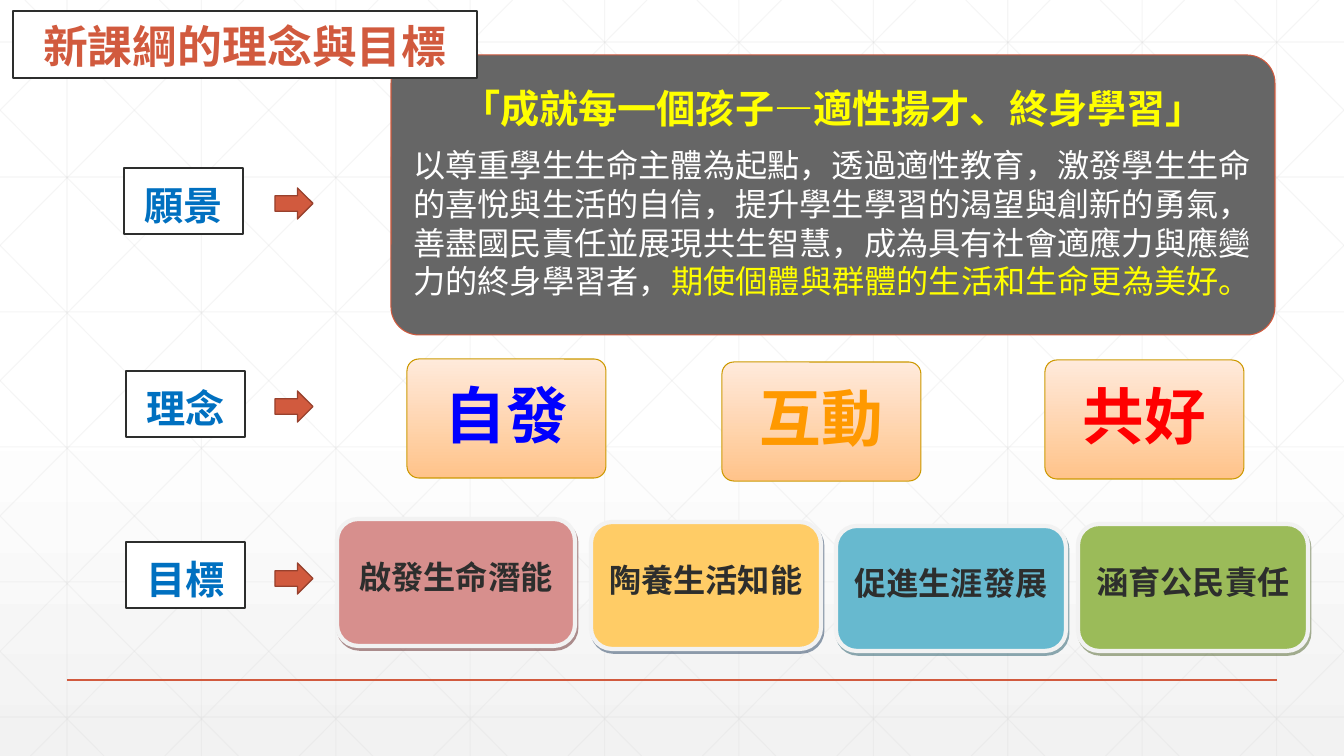
from lxml import etree
from pptx import Presentation
from pptx.dml.color import RGBColor
from pptx.enum.shapes import MSO_CONNECTOR, MSO_SHAPE
from pptx.enum.text import MSO_ANCHOR, PP_ALIGN
from pptx.oxml.ns import qn
from pptx.util import Pt

PX = 12192000 / 1344
WIDTH, HEIGHT = 1344, 756
RECT, ROUNDED, ARROW = MSO_SHAPE.RECTANGLE, MSO_SHAPE.ROUNDED_RECTANGLE, MSO_SHAPE.RIGHT_ARROW
STRAIGHT = MSO_CONNECTOR.STRAIGHT
MIDDLE, BOTTOM = MSO_ANCHOR.MIDDLE, MSO_ANCHOR.BOTTOM
CENTER, LEFT = PP_ALIGN.CENTER, PP_ALIGN.LEFT
ACCENT = "D15A3E"
rgb = RGBColor.from_string

prs = Presentation()
prs.slide_width, prs.slide_height = round(WIDTH * PX), round(HEIGHT * PX)
slide = prs.slides.add_slide(prs.slide_layouts[6])


def add_line(x1, y1, x2, y2, color, width, opacity=100):
    line = slide.shapes.add_connector(STRAIGHT, *(round(v * PX) for v in (x1, y1, x2, y2)))
    line.line.color.rgb = rgb(color)
    line.line.width = Pt(width)
    properties = line.element.spPr
    tint = properties.find(".//" + qn("a:srgbClr"))
    etree.SubElement(tint, qn("a:alpha"), val=str(opacity * 1000))
    etree.SubElement(properties, qn("a:effectLst"))


def add_box(kind, place, fill, outline, width, text="", size=18, color="FFFFFF",
            anchor=BOTTOM, insets=(10, 5, 10, 5), spacing=0.9):
    """Add a filled shape with one centred bold paragraph; insets run left, top, right, bottom."""
    box = slide.shapes.add_shape(kind, *(round(v * PX) for v in place))
    box.shadow.inherit = False
    box.fill.solid()
    box.fill.fore_color.rgb = rgb(fill)
    box.line.color.rgb = rgb(outline)
    box.line.width = Pt(width)
    if text:
        frame = box.text_frame
        frame.word_wrap = True
        frame.vertical_anchor = anchor
        (frame.margin_left, frame.margin_top,
         frame.margin_right, frame.margin_bottom) = (round(v * PX) for v in insets)
        paragraph = frame.paragraphs[0]
        paragraph.text = text
        paragraph.alignment = CENTER
        paragraph.line_spacing = spacing
        paragraph.font.name = "Arial"
        paragraph.font.size = Pt(size)
        paragraph.font.bold = True
        paragraph.font.color.rgb = rgb(color)
    return box


# Background wash and grid
backdrop = slide.background.fill
backdrop.gradient()
backdrop.gradient_angle = 270
for stop, position, shade in zip(backdrop.gradient_stops, (0.53, 1), ("FFFFFF", "F2F2F2")):
    stop.position = position
    stop.color.rgb = rgb(shade)

GRID = ("D8D8D8", 0.75, 24)
STEP, DIAGONAL_RUN = 134.4, 751
for column in range(10):
    x = 67 + column * STEP
    add_line(x, 0, x, HEIGHT, *GRID)
for row in range(6):
    y = 42 + row * 135
    add_line(0, y, WIDTH, y, *GRID)
for diagonal in range(-5, 10):
    top_x = 25 + diagonal * STEP
    x1, x2 = max(top_x, 0), min(top_x + DIAGONAL_RUN, WIDTH)
    y1, y2 = ((x - top_x) * HEIGHT / DIAGONAL_RUN for x in (x1, x2))
    add_line(x1, y1, x2, y2, *GRID)
    add_line(WIDTH - x1, y1, WIDTH - x2, y2, *GRID)
add_line(67, 680, 1277, 680, ACCENT, 1)

# Goals
goals = [
    ("啟發生命潛能", (337, 519, 238, 127), "D78F8D", "622423"),
    ("陶養生活知能", (591, 522, 230, 127), "FFCC66", "243F60"),
    ("促進生涯發展", (836, 526, 230, 125), "67B9CF", "205867"),
    ("涵育公民責任", (1078, 524, 230, 127), "9BBB59", "4E6128"),
]
for goal, place, fill, shade in goals:
    card = add_box(ROUNDED, place, fill, "F2F2F2", 3, goal, 23, "2D2E2D",
                   MIDDLE, (10, 5, 10, 13), 0.96)
    effects = card.element.spPr.find(qn("a:effectLst"))
    shadow = etree.SubElement(effects, qn("a:outerShdw"), blurRad="0", dist=str(Pt(2.2)),
                              dir=str(63 * 60000), algn="ctr", rotWithShape="0")
    shadow_color = etree.SubElement(shadow, qn("a:srgbClr"), val=shade)
    etree.SubElement(shadow_color, qn("a:alpha"), val="49000")

# Vision
vision = add_box(ROUNDED, (391, 55, 884, 280), "666666", ACCENT, 0.75,
                 "「成就每一個孩子—適性揚才、終身學習」", 28, "FFFF00", MIDDLE, (14, 12, 14, 12))
vision.adjustments[0] = 0.1
statement = vision.text_frame.add_paragraph()
statement.alignment = LEFT
statement.space_before = Pt(9.8)
statement.font.name = "Arial"
statement.font.size = Pt(23)
for passage, color in [
    ("以尊重學生生命主體為起點，透過適性教育，激發學生生命的喜悅與生活的自信，"
     "提升學生學習的渴望與創新的勇氣，善盡國民責任並展現共生智慧，"
     "成為具有社會適應力與應變力的終身學習者，", "FFFFFF"),
    ("期使個體與群體的生活和生命更為美好。", "FFFF00"),
]:
    run = statement.add_run()
    run.text = passage
    run.font.color.rgb = rgb(color)

# Ideas
for idea, x, y, color in [("自發", 407, 359, "0000FF"), ("互動", 722, 362, "FF9900"),
                          ("共好", 1045, 360, "FF0000")]:
    card = add_box(ROUNDED, (x, y, 199, 119), "FFEADB", "CC9900", 0.75, idea, 44, color,
                   MIDDLE, (21, 21, 21, 21))
    card.adjustments[0] = 0.1
    card.fill.gradient()
    card.fill.gradient_angle = 90
    for stop, shade in zip(card.fill.gradient_stops, ("FFC38A", "FFEADB")):
        stop.position = 0 if shade == "FFC38A" else 1
        stop.color.rgb = rgb(shade)

# Title, row labels and their arrows
LABEL = ("FFFFFF", "2D2E2D", 1.5)
add_box(RECT, (13, 11, 464, 67), *LABEL, "新課綱的理念與目標", 32, ACCENT)
for label, x, y, arrow_y in [("願景", 124, 168, 188), ("理念", 126, 371, 391),
                             ("目標", 126, 542, 563)]:
    add_box(RECT, (x, y, 119, 66), *LABEL, label, 28, "0070C0")
    add_box(ARROW, (275, arrow_y, 38, 31), ACCENT, "98412D", 1)

prs.save("out.pptx")
